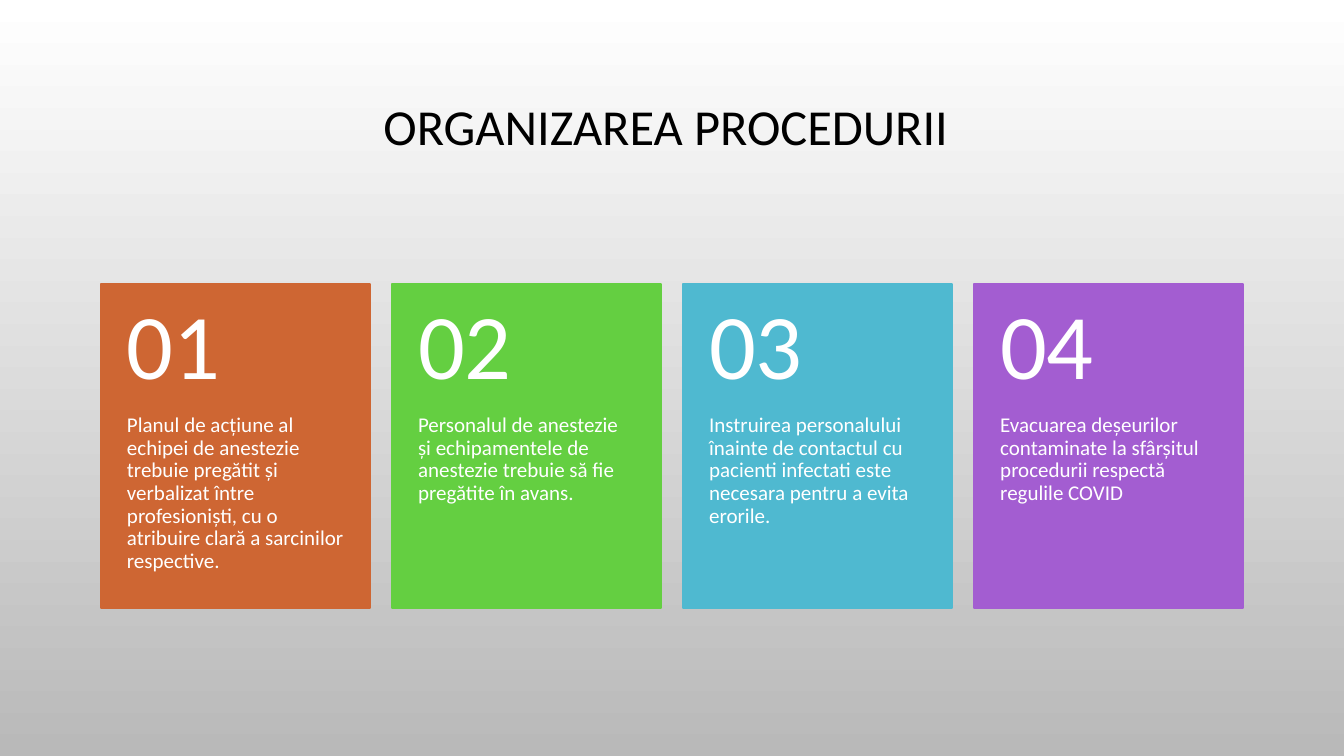
from pptx import Presentation
from pptx.dml.color import RGBColor
from pptx.enum.shapes import MSO_SHAPE
from pptx.enum.text import MSO_ANCHOR, MSO_AUTO_SIZE, PP_ALIGN
from pptx.util import Inches, Pt

RECTANGLE = MSO_SHAPE.RECTANGLE
TOP, MIDDLE = MSO_ANCHOR.TOP, MSO_ANCHOR.MIDDLE
LEFT, CENTER = PP_ALIGN.LEFT, PP_ALIGN.CENTER
NO_AUTOFIT = MSO_AUTO_SIZE.NONE

COLORS = {
    "white": "FFFFFF",
    "gray": "B9B9B9",
    "black": "000000",
    "orange": "CE6633",
    "green": "64CF41",
    "blue": "4FB9D0",
    "purple": "A35DD1",
}
CARDS = [
    ("orange", "Planul de acțiune al echipei de anestezie trebuie pregătit și "
               "verbalizat între profesioniști, cu o atribuire clară a sarcinilor respective."),
    ("green", "Personalul de anestezie și echipamentele de anestezie trebuie să fie "
              "pregătite în avans."),
    ("blue", "Instruirea personalului înainte de contactul cu pacienti infectati este "
             "necesara pentru a evita erorile."),
    ("purple", "Evacuarea deșeurilor contaminate la sfârșitul procedurii respectă "
               "regulile COVID"),
]
MARGIN, CARD_TOP = 1, 2.82
CARD_WIDTH, CARD_HEIGHT, NUMBER_HEIGHT = 2.67, 3.21, 1.29
CARD_PITCH = 2.887


def color(name):
    return RGBColor.from_string(COLORS[name])


def write_text(shape, text, size, color_name, anchor, alignment, insets):
    """Fill a shape with one paragraph; insets run left, top, right, bottom."""
    frame = shape.text_frame
    frame.text = text
    sides = ("margin_left", "margin_top", "margin_right", "margin_bottom")
    frame_format = {"word_wrap": True, "auto_size": NO_AUTOFIT, "vertical_anchor": anchor}
    frame_format.update(zip(sides, map(Inches, insets)))
    for name, value in frame_format.items():
        setattr(frame, name, value)
    paragraph = frame.paragraphs[0]
    paragraph_format = {"alignment": alignment, "line_spacing": 0.9, "space_before": Pt(0)}
    for name, value in paragraph_format.items():
        setattr(paragraph, name, value)
    font = paragraph.runs[0].font
    for name, value in {"name": "Calibri", "size": Pt(size)}.items():
        setattr(font, name, value)
    font.color.rgb = color(color_name)


presentation = Presentation()
presentation.slide_width = Inches(13.33)
presentation.slide_height = Inches(7.5)
slide = presentation.slides.add_slide(presentation.slide_layouts[5])

background = slide.background.fill
background.gradient()
background.gradient_angle = 270
for stop, name in zip(background.gradient_stops, ("white", "gray")):
    stop.color.rgb = color(name)

title = slide.shapes.title
title.left, title.top = Inches(MARGIN), Inches(0.68)
title.width, title.height = Inches(11.33), Inches(1.74)
write_text(title, "ORGANIZAREA PROCEDURII", 36, "black", MIDDLE, CENTER,
           (0.1, 0.05, 0.22, 0.59))

for index, (color_name, description) in enumerate(CARDS):
    left = Inches(MARGIN + index * CARD_PITCH)
    width = Inches(CARD_WIDTH)
    card = slide.shapes.add_group_shape()

    panel = card.shapes.add_shape(RECTANGLE, left, Inches(CARD_TOP), width, Inches(CARD_HEIGHT))
    panel.shadow.inherit = False
    panel.fill.solid()
    panel.fill.fore_color.rgb = color(color_name)
    panel.line.color.rgb = color(color_name)
    panel.line.width = Pt(1.25)

    description_box = card.shapes.add_textbox(
        left, Inches(CARD_TOP + NUMBER_HEIGHT), width, Inches(CARD_HEIGHT - NUMBER_HEIGHT))
    write_text(description_box, description, 15, "white", TOP, LEFT, (0.26, 0, 0.26, 0.36))

    number_box = card.shapes.add_textbox(left, Inches(CARD_TOP), width, Inches(NUMBER_HEIGHT))
    write_text(number_box, f"{index + 1:02}", 66, "white", MIDDLE, LEFT,
               (0.26, 0.18, 0.26, 0.18))

presentation.save("out.pptx")
